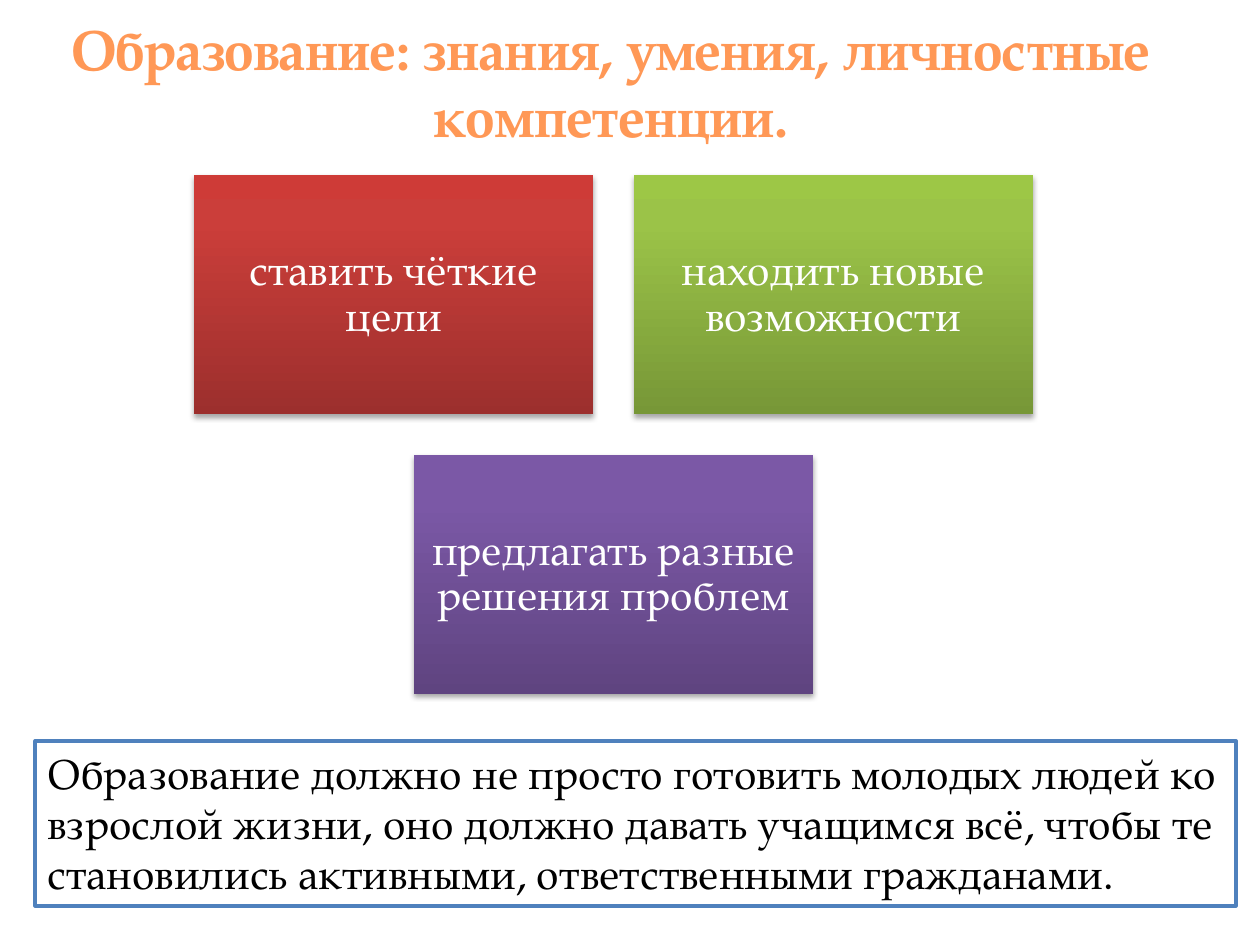
"""Build the slide on education, its three competencies and the conclusion."""
import copy
import dataclasses

import pptx
import pptx.dml.color
import pptx.enum.shapes
import pptx.enum.text
import pptx.oxml
import pptx.oxml.ns
import pptx.util

Inches = pptx.util.Inches
Align = pptx.enum.text.PP_ALIGN
Anchor = pptx.enum.text.MSO_ANCHOR
RECTANGLE = pptx.enum.shapes.MSO_SHAPE.RECTANGLE


@dataclasses.dataclass(frozen=True)
class Theme:
    font: str = "TeX Gyre Pagella"
    title_size: int = 32
    body_size: int = 24
    white: str = "FFFFFF"
    black: str = "000000"
    border: str = "4F81BD"
    orange: tuple = ((0, "9D4700"), (0.78, "FF9856"), (1, "FFF5F1"))
    red: tuple = ((0, "9C2F2D"), (0.8, "CB3E3A"), (1, "CE3B37"))
    green: tuple = ((0, "779737"), (0.8, "9BC348"), (1, "9DC746"))
    purple: tuple = ((0, "5F4480"), (0.8, "7B58A6"), (1, "7C57A8"))


SHADOW = (
    f'<a:outerShdw {pptx.oxml.ns.nsdecls("a")} blurRad="40000" dist="23000" '
    'dir="5400000" rotWithShape="0"><a:srgbClr val="000000">'
    '<a:alpha val="35000"/></a:srgbClr></a:outerShdw>'
)


def color(value):
    return pptx.dml.color.RGBColor.from_string(value)


def set_values(target, values):
    for name, value in values.items():
        setattr(target, name, value)


def set_gradient(fill, element, stops, angle):
    fill.gradient()
    fill.gradient_angle = angle
    stop_list = next(element.iter(pptx.oxml.ns.qn("a:gsLst")))
    stop_list.insert(1, copy.deepcopy(stop_list[0]))
    for stop, (position, value) in zip(fill.gradient_stops, stops):
        stop.position = position
        stop.color.rgb = color(value)


class SlideBuilder:
    def __init__(self, slide, theme):
        self.slide = slide
        self.theme = theme

    def add_text(self, shape, text, size, align, frame_format, bold=False, spacing=None):
        set_values(shape.text_frame, {"word_wrap": True, **frame_format})
        paragraph = shape.text_frame.paragraphs[0]
        set_values(paragraph, {"alignment": align, "line_spacing": spacing})
        run = paragraph.add_run()
        run.text = text
        set_values(run.font, {
            "name": self.theme.font, "size": pptx.util.Pt(size), "bold": bold,
        })
        return run

    def title(self, text, left, top, width, height):
        shape = self.slide.shapes.title
        set_values(shape, {
            "left": Inches(left), "top": Inches(top),
            "width": Inches(width), "height": Inches(height),
        })
        run = self.add_text(shape, text, self.theme.title_size, Align.CENTER, {
            "vertical_anchor": Anchor.MIDDLE,
            "auto_size": pptx.enum.text.MSO_AUTO_SIZE.NONE,
        }, bold=True)
        set_gradient(run.font.fill, shape.element, self.theme.orange, 270)

    def rectangle(self, left, top, width, height):
        shape = self.slide.shapes.add_shape(
            RECTANGLE, Inches(left), Inches(top), Inches(width), Inches(height))
        shape.shadow.inherit = False
        return shape

    def card(self, text, stops, left, top, width, height):
        shape = self.rectangle(left, top, width, height)
        set_gradient(shape.fill, shape.element, stops, 90)
        shape.line.fill.background()
        effects = next(shape.element.iter(pptx.oxml.ns.qn("a:effectLst")))
        effects.append(pptx.oxml.parse_xml(SHADOW))
        margins = {f"margin_{side}": Inches(0.1)
                   for side in ("left", "top", "right", "bottom")}
        run = self.add_text(shape, text, self.theme.body_size, Align.CENTER,
                            {"vertical_anchor": Anchor.MIDDLE, **margins}, spacing=0.9)
        run.font.color.rgb = color(self.theme.white)

    def conclusion(self, text, left, top, width, height):
        shape = self.rectangle(left, top, width, height)
        shape.fill.solid()
        shape.fill.fore_color.rgb = color(self.theme.white)
        shape.line.color.rgb = color(self.theme.border)
        shape.line.width = pptx.util.Pt(2)
        run = self.add_text(shape, text, self.theme.body_size, Align.LEFT, {
            "vertical_anchor": Anchor.TOP,
            "auto_size": pptx.enum.text.MSO_AUTO_SIZE.SHAPE_TO_FIT_TEXT,
        })
        run.font.color.rgb = color(self.theme.black)


def main():
    presentation = pptx.Presentation()
    presentation.slide_width = Inches(10)
    presentation.slide_height = Inches(7.5)
    theme = Theme()
    slide = presentation.slides.add_slide(presentation.slide_layouts[5])
    builder = SlideBuilder(slide, theme)

    builder.title("Образование: знания, умения, личностные компетенции.",
                  0.35, 0.02, 9, 1.25)

    rows = (
        (("ставить чёткие цели", theme.red),
         ("находить новые возможности", theme.green)),
        (("предлагать разные решения проблем", theme.purple),),
    )
    center, first_top, width, height, gap = 4.87, 1.39, 3.17, 1.9, 0.32
    for row_index, row in enumerate(rows):
        row_left = center - (len(row) * (width + gap) - gap) / 2
        top = first_top + row_index * (height + gap)
        for column, (text, stops) in enumerate(row):
            builder.card(text, stops, row_left + column * (width + gap),
                         top, width, height)

    builder.conclusion(
        "Образование должно не просто готовить молодых людей ко взрослой жизни, "
        "оно должно давать учащимся всё, чтобы те становились активными, "
        "ответственными гражданами.", 0.28, 5.88, 9.53, 1.31)
    presentation.save("out.pptx")


if __name__ == "__main__":
    main()
